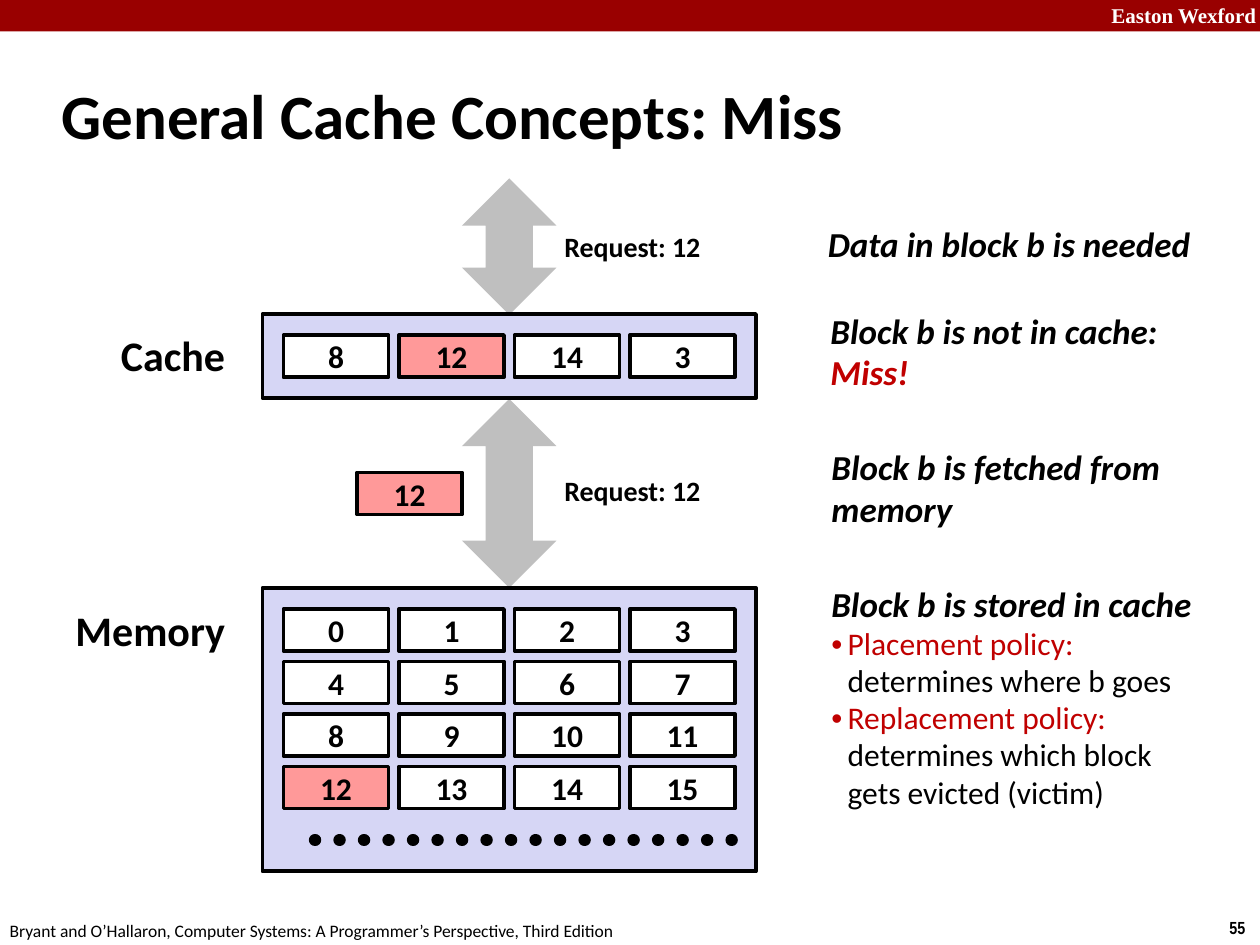
from lxml.etree import SubElement
from pptx import Presentation
from pptx.dml.color import RGBColor
from pptx.enum.dml import MSO_LINE
from pptx.enum.shapes import MSO_CONNECTOR, MSO_SHAPE
from pptx.enum.text import MSO_ANCHOR, MSO_AUTO_SIZE, PP_ALIGN
from pptx.oxml.ns import qn
from pptx.util import Pt

BLACK = RGBColor(0x00, 0x00, 0x00)
WHITE = RGBColor(0xFF, 0xFF, 0xFF)
MAROON = RGBColor(0x99, 0x00, 0x00)
RED = RGBColor(0xC0, 0x00, 0x00)
PINK = RGBColor(0xFF, 0x99, 0x99)
LAVENDER = RGBColor(0xD6, 0xD6, 0xF5)
GRAY = RGBColor(0xBF, 0xBF, 0xBF)

TITLE = "General Cache Concepts: Miss"
REQUESTED = "12"
CACHE = [["8", "12", "14", "3"]]
MEMORY = [[str(4 * row + col) for col in range(4)] for row in range(4)]

# Formats of text runs
BASE = {"name": "Calibri", "bold": True, "italic": False}
BLOCK = {**BASE, "size": Pt(18)}
LABEL = {**BASE, "size": Pt(24)}
REQUEST = {**BASE, "size": Pt(16)}
STEP = {**BASE, "size": Pt(20), "italic": True}
DETAIL = {**BASE, "size": Pt(18), "bold": False}
BRAND = {**BASE, "name": "Times New Roman", "size": Pt(12)}
NUMBER = {**BASE, "name": "Arial Narrow", "size": Pt(10)}
SOURCE = {**BASE, "size": Pt(10), "bold": False}

# Box (left, top, width, height), text, format, colour, alignment, wrap
LABELS = [
    ((622, -2, 103, 21.6), "Easton Wexford", BRAND, WHITE, PP_ALIGN.RIGHT, True),
    ((695.5, 520.5, 24.5, 19.5), "55", NUMBER, BLACK, PP_ALIGN.LEFT, False),
    ((-1.5, 522, 366, 19.5),
     "Bryant and O’Hallaron, Computer Systems: A Programmer’s Perspective, Third Edition",
     SOURCE, BLACK, PP_ALIGN.LEFT, False),
    ((62, 185, 75, 36), "Cache", LABEL, BLACK, PP_ALIGN.LEFT, False),
    ((36, 342, 101, 36), "Memory", LABEL, BLACK, PP_ALIGN.LEFT, False),
    ((314.6, 127.5, 93.6, 26.6), "Request: 12", REQUEST, BLACK, PP_ALIGN.CENTER, False),
    ((314.6, 267, 93.6, 26.6), "Request: 12", REQUEST, BLACK, PP_ALIGN.CENTER, False),
]

# Box, paragraphs; a paragraph is (bulleted, format, lines of (text, colour))
STEPS = [
    ((466, 124.5, 222.5, 31), [(False, STEP, [("Data in block b is needed", BLACK)])]),
    ((467.5, 174, 202.5, 55), [(False, STEP, [("Block b is not in cache:", BLACK)]),
                               (False, STEP, [("Miss!", RED)])]),
    ((468, 252, 203.5, 55), [(False, STEP, [("Block b is fetched from", BLACK)]),
                             (False, STEP, [("memory", BLACK)])]),
    ((468, 330, 221, 138), [
        (False, STEP, [("Block b is stored in cache", BLACK)]),
        (True, DETAIL, [("Placement policy:", RED), ("determines where b goes", BLACK)]),
        (True, DETAIL, [("Replacement policy:", RED), ("determines which block", BLACK),
                        ("gets evicted (victim)", BLACK)])]),
]

ARROWS = [(264, 102, 54, 78), (264, 228, 54, 108)]
CACHE_BOX = (150, 179.5, 282, 48)
MEMORY_BOX = (150, 336, 282, 162)
PADDING = 12
BLOCK_W, BLOCK_H, BLOCK_GAP = 60, 24, 6
FETCHED_AT = (204, 270)
DOTS_Y, DOTS_LEFT, DOTS_RIGHT = 480, 180, 420
INDENT = 9.36


def add_run(p, text, style, color):
    r = p.add_run()
    r.text = text
    for key, value in style.items():
        setattr(r.font, key, value)
    r.font.color.rgb = color


def add_solid(s, kind, box, fill, outlined=True):
    sp = s.shapes.add_shape(kind, *map(Pt, box))
    sp.shadow.inherit = False
    sp.fill.solid()
    sp.fill.fore_color.rgb = fill
    if outlined:
        sp.line.color.rgb = BLACK
        sp.line.width = Pt(2.25)
    else:
        sp.line.fill.background()
    return sp


def add_block(s, left, top, text):
    fill = PINK if text == REQUESTED else WHITE
    tf = add_solid(s, MSO_SHAPE.RECTANGLE, (left, top, BLOCK_W, BLOCK_H), fill).text_frame
    tf.vertical_anchor = MSO_ANCHOR.MIDDLE
    tf.paragraphs[0].alignment = PP_ALIGN.CENTER
    add_run(tf.paragraphs[0], text, BLOCK, BLACK)


def add_store(s, box, rows):
    """Draw a container with its grid of numbered blocks."""
    add_solid(s, MSO_SHAPE.RECTANGLE, box, LAVENDER)
    for i, row in enumerate(rows):
        for j, text in enumerate(row):
            add_block(s, box[0] + PADDING + j * (BLOCK_W + BLOCK_GAP),
                      box[1] + PADDING + i * (BLOCK_H + BLOCK_GAP), text)


def add_dots(s):
    """Draw the row of round dots that stands for further memory blocks."""
    cx = s.shapes.add_connector(MSO_CONNECTOR.STRAIGHT, Pt(DOTS_LEFT), Pt(DOTS_Y),
                                Pt(DOTS_RIGHT), Pt(DOTS_Y))
    cx.line.color.rgb = BLACK
    cx.line.width = Pt(7)
    cx.line.dash_style = MSO_LINE.ROUND_DOT
    cx.line._get_or_add_ln().set("cap", "rnd")
    SubElement(cx._element.spPr, qn("a:effectLst"))


def add_text_box(s, box, wrap=False):
    tf = s.shapes.add_textbox(*map(Pt, box)).text_frame
    tf.word_wrap = wrap
    tf.auto_size = MSO_AUTO_SIZE.SHAPE_TO_FIT_TEXT
    return tf


def hang(p, bullet=None):
    """Give a paragraph a hanging indent, with a bullet if one is named."""
    pPr = p._p.get_or_add_pPr()
    pPr.set("marL", str(Pt(INDENT)))
    pPr.set("indent", str(-Pt(INDENT)))
    if bullet:
        SubElement(pPr, qn("a:buFont"), typeface="Arial")
        SubElement(pPr, qn("a:buChar"), char=bullet)


def add_step(s, box, paragraphs):
    tf = add_text_box(s, box)
    tf.vertical_anchor = MSO_ANCHOR.MIDDLE
    for i, (bulleted, style, lines) in enumerate(paragraphs):
        p = tf.add_paragraph() if i else tf.paragraphs[0]
        p.line_spacing = 0.98
        if bulleted:
            hang(p, "•")
        for j, (text, color) in enumerate(lines):
            if j:
                p.add_line_break()
            add_run(p, text, style, color)


def set_title(s):
    title = s.shapes.title
    title.left, title.top, title.width, title.height = map(Pt, (28, 35.5, 597.5, 60))
    tf = title.text_frame
    tf.auto_size = MSO_AUTO_SIZE.NONE
    tf.vertical_anchor = MSO_ANCHOR.MIDDLE
    p = tf.paragraphs[0]
    p.alignment = PP_ALIGN.LEFT
    hang(p)
    add_run(p, TITLE, {**BASE, "size": Pt(36)}, BLACK)


def main():
    prs = Presentation()
    prs.slide_width, prs.slide_height = Pt(720), Pt(540)
    s = prs.slides.add_slide(prs.slide_layouts[5])
    set_title(s)
    add_solid(s, MSO_SHAPE.RECTANGLE, (0, 0, 720, 18), MAROON, outlined=False)
    for box in ARROWS:
        add_solid(s, MSO_SHAPE.UP_DOWN_ARROW, box, GRAY, outlined=False)
    add_store(s, MEMORY_BOX, MEMORY)
    add_store(s, CACHE_BOX, CACHE)
    add_block(s, *FETCHED_AT, REQUESTED)
    add_dots(s)
    for box, text, style, color, align, wrap in LABELS:
        p = add_text_box(s, box, wrap).paragraphs[0]
        p.alignment = align
        add_run(p, text, style, color)
    for box, paragraphs in STEPS:
        add_step(s, box, paragraphs)
    prs.save("out.pptx")


if __name__ == "__main__":
    main()
